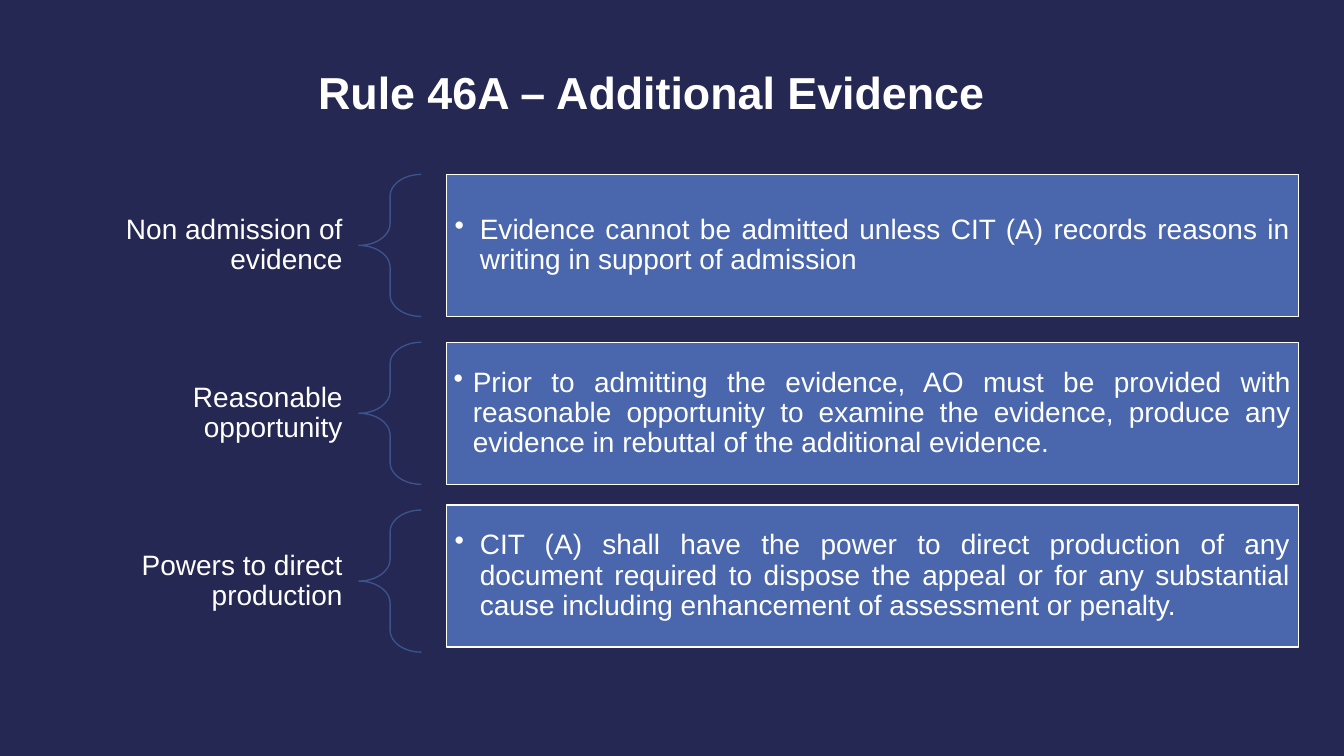
import pptx
import pptx.dml.color
import pptx.enum.shapes
import pptx.enum.text
import pptx.oxml.ns
import pptx.util
import lxml.etree

RGB = pptx.dml.color.RGBColor.from_string
ALIGN = pptx.enum.text.PP_ALIGN
ANCHOR = pptx.enum.text.MSO_ANCHOR
SHAPE = pptx.enum.shapes.MSO_SHAPE
IN = pptx.util.Inches
PT = pptx.util.Pt

THEME = {
    "background": RGB("242852"), "box": RGB("4A66AC"),
    "brace": RGB("3B528A"), "text": RGB("FFFFFF"),
    "font": "Arial", "title": PT(32), "body": PT(20),
}

# Grid: three columns, rows at an equal pitch
ROW_TOP, ROW_PITCH, ROW_H = 1.73, 1.665, 1.41
LABEL_X, LABEL_W = 0.45, 3.11
BRACE_X, BRACE_W = 3.56, 0.62
BOX_X, BOX_W = 4.43, 8.45

# Label, rule, box inset, bullet indent, upward shift of the box
ROWS = [
    ("Non admission of evidence",
     "Evidence cannot be admitted unless CIT (A) records reasons in writing "
     "in support of admission", 0.08, 0.25, 0),
    ("Reasonable opportunity",
     "Prior to admitting the evidence, AO must be provided with reasonable "
     "opportunity to examine the evidence, produce any evidence in rebuttal "
     "of the additional evidence.", 0.07, 0.19, 0),
    ("Powers to direct production",
     "CIT (A) shall have the power to direct production of any document "
     "required to dispose the appeal or for any substantial cause including "
     "enhancement of assessment or penalty.", 0.08, 0.25, 0.05),
]


def write(sp, text, size, align, anchor, inset_x, inset_y, bold=False):
    """Set one paragraph in a shape and return it."""
    tf = sp.text_frame
    tf.word_wrap = True
    tf.auto_size = pptx.enum.text.MSO_AUTO_SIZE.NONE
    tf.vertical_anchor = anchor
    tf.margin_left = tf.margin_right = IN(inset_x)
    tf.margin_top = tf.margin_bottom = IN(inset_y)
    p = tf.paragraphs[0]
    p.alignment = align
    p.line_spacing = 0.9
    r = p.add_run()
    r.text = text
    r.font.name = THEME["font"]
    r.font.size = size
    r.font.bold = bold
    r.font.color.rgb = THEME["text"]
    return p


prs = pptx.Presentation()
prs.slide_width, prs.slide_height = IN(13.333), IN(7.5)
s = prs.slides.add_slide(prs.slide_layouts[5])
s.background.fill.solid()
s.background.fill.fore_color.rgb = THEME["background"]

# Title
title = s.shapes.title
title.left, title.top, title.width, title.height = map(IN, (1.29, 0.65, 10.35, 0.74))
p = write(title, "Rule 46A – Additional Evidence", THEME["title"],
          ALIGN.CENTER, ANCHOR.TOP, 0.1, 0.05, bold=True)
p.space_before = PT(10)

for i, (label, rule, inset, indent, shift) in enumerate(ROWS):
    top = ROW_TOP + i * ROW_PITCH

    # Label
    sp = s.shapes.add_textbox(IN(LABEL_X), IN(top), IN(LABEL_W), IN(ROW_H))
    write(sp, label, THEME["body"], ALIGN.RIGHT, ANCHOR.MIDDLE, 0.16, 0.06)

    # Brace
    brace = s.shapes.add_shape(SHAPE.LEFT_BRACE, IN(BRACE_X), IN(top), IN(BRACE_W), IN(ROW_H))
    brace.adjustments[0], brace.adjustments[1] = 0.35, 0.5
    brace.fill.background()
    brace.line.color.rgb = THEME["brace"]

    # Box with its bulleted rule
    box = s.shapes.add_shape(SHAPE.RECTANGLE, IN(BOX_X), IN(top - shift), IN(BOX_W), IN(ROW_H))
    box.fill.solid()
    box.fill.fore_color.rgb = THEME["box"]
    box.line.color.rgb = THEME["text"]
    p = write(box, rule, THEME["body"], ALIGN.JUSTIFY, ANCHOR.MIDDLE, inset, inset)
    pPr = p._p.get_or_add_pPr()
    pPr.set("marL", str(IN(indent)))
    pPr.set("indent", str(-IN(indent)))
    lxml.etree.SubElement(pPr, pptx.oxml.ns.qn("a:buChar"), char="•")

    for sp in (brace, box):
        sp.line.width = PT(1)
        sp.shadow.inherit = False

prs.save("out.pptx")
